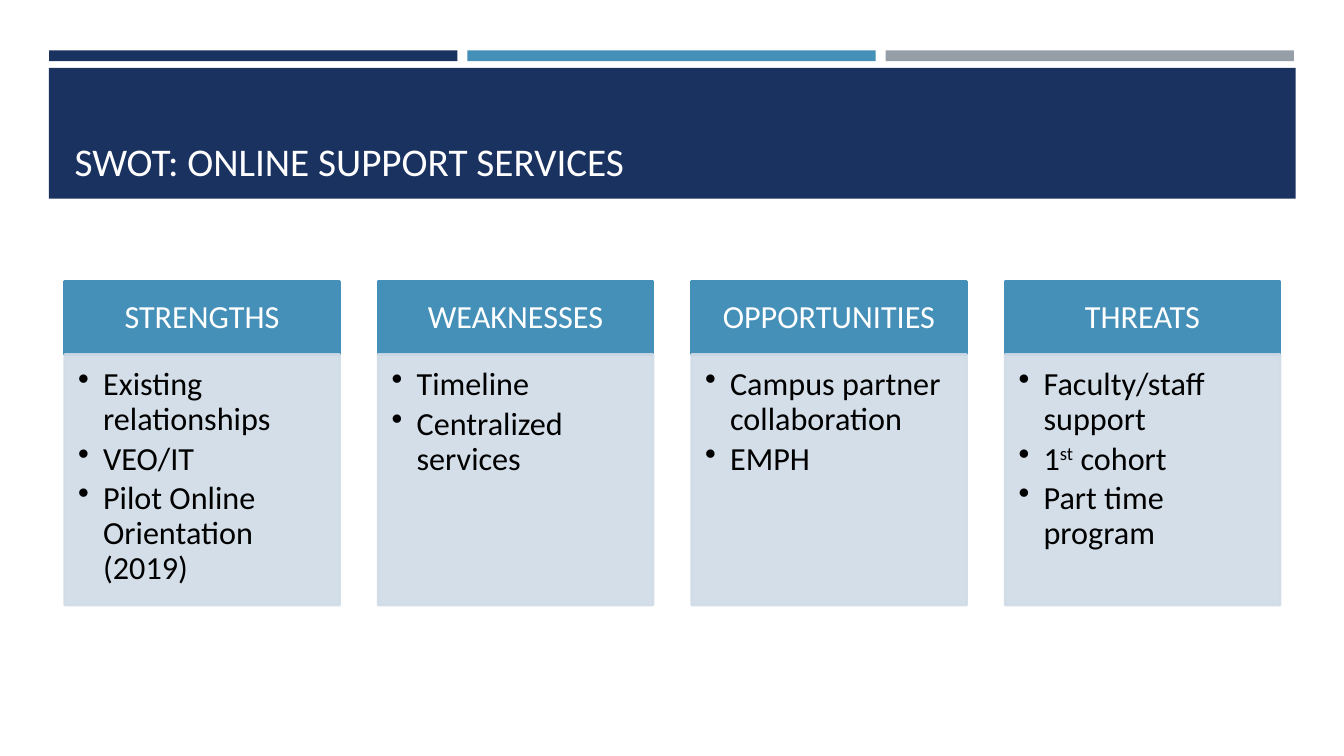
from lxml import etree
from pptx import Presentation
from pptx import util as u
from pptx.dml.color import RGBColor
from pptx.enum import shapes, text
from pptx.oxml.ns import qn

NAVY, BLUE, GREY, PALE = "1A3260", "4590B8", "969FA7", "CFDBE6"

SWOT = {
    "STRENGTHS": ["Existing relationships", "VEO/IT", "Pilot Online Orientation (2019)"],
    "WEAKNESSES": ["Timeline", "Centralized services"],
    "OPPORTUNITIES": ["Campus partner collaboration", "EMPH"],
    "THREATS": ["Faculty/staff support", "1^st^ cohort", "Part time program"],
}


def rgb(value):
    return RGBColor.from_string(value)


def set_alpha(fill_xml, percent):
    color = fill_xml.find(qn("a:srgbClr"))
    etree.SubElement(color, qn("a:alpha")).set("val", str(percent * 1000))


def write(tf, paragraphs, size=23, color="000000", font="Calibri", align=text.PP_ALIGN.LEFT,
          anchor=text.MSO_ANCHOR.TOP, margins=(0.25, 0.13, 0.25, 0.13),
          line=1.0, after=0, bullet=False):
    tf.word_wrap = True
    tf.auto_size = text.MSO_AUTO_SIZE.NONE
    tf.vertical_anchor = anchor
    tf.margin_left, tf.margin_top, tf.margin_right, tf.margin_bottom = map(u.Cm, margins)
    for i, content in enumerate(paragraphs):
        p = tf.add_paragraph() if i else tf.paragraphs[0]
        p.alignment, p.line_spacing, p.space_after = align, line, u.Pt(after)
        p.space_before = u.Pt(0)
        if bullet:
            pPr = p._p.get_or_add_pPr()
            pPr.set("marL", str(u.Cm(0.63)))
            pPr.set("indent", str(u.Cm(-0.63)))
            etree.SubElement(pPr, qn("a:buChar")).set("char", "•")
        for j, part in enumerate(content.split("^")):
            r = p.add_run()
            r.text = part
            r.font.size, r.font.name = u.Pt(size), font
            r.font.color.rgb = rgb(color)
            if j % 2:
                r.font._element.set("baseline", "30000")


class SwotSlide:
    def __init__(self, prs):
        self.s = prs.slides.add_slide(prs.slide_layouts[5])

    def rect(self, x, y, w, h, fill, line=False, alpha=None):
        sp = self.s.shapes.add_shape(shapes.MSO_SHAPE.RECTANGLE, *map(u.Cm, (x, y, w, h)))
        sp.shadow.inherit = False
        sp.fill.solid()
        sp.fill.fore_color.rgb = rgb(fill)
        if line:
            sp.line.color.rgb = rgb(fill)
            sp.line.width = u.Pt(1.75)
        else:
            sp.line.fill.background()
        if alpha:
            for fill_xml in sp.element.spPr.iter(qn("a:solidFill")):
                set_alpha(fill_xml, alpha)
        return sp

    def title(self, content):
        sp = self.s.shapes.title
        sp.left, sp.top, sp.width, sp.height = map(u.Cm, (1.63, 1.96, 30.63, 2.82))
        sp.element.getparent().append(sp.element)
        write(sp.text_frame, [content], size=28, color="FFFEFF", anchor=text.MSO_ANCHOR.BOTTOM)

    def column(self, x, heading, items):
        head = self.rect(x, 7.09, 6.93, 1.84, BLUE, line=True)
        write(head.text_frame, [heading], color="FFFFFF", align=text.PP_ALIGN.CENTER,
              anchor=text.MSO_ANCHOR.MIDDLE, margins=(0.45, 0.26, 0.45, 0.26), line=0.9)
        body = self.rect(x, 8.93, 6.93, 6.32, PALE, line=True, alpha=90)
        write(body.text_frame, items, margins=(0.34, 0.34, 0.45, 0.51),
              line=0.9, after=3.5, bullet=True)


def main():
    prs = Presentation()
    prs.slide_width, prs.slide_height = u.Cm(33.87), u.Cm(19.05)
    slide = SwotSlide(prs)
    for i, color in enumerate((NAVY, BLUE, GREY)):
        slide.rect(1.24 + 10.54 * i, 1.27, 10.29, 0.27, color)
    slide.rect(1.23, 1.71, 31.42, 3.3, NAVY)
    slide.title("SWOT: ONLINE SUPPORT SERVICES")
    for i, (heading, items) in enumerate(SWOT.items()):
        slide.column(1.63 + 7.9 * i, heading, items)
    prs.save("out.pptx")


if __name__ == "__main__":
    main()
